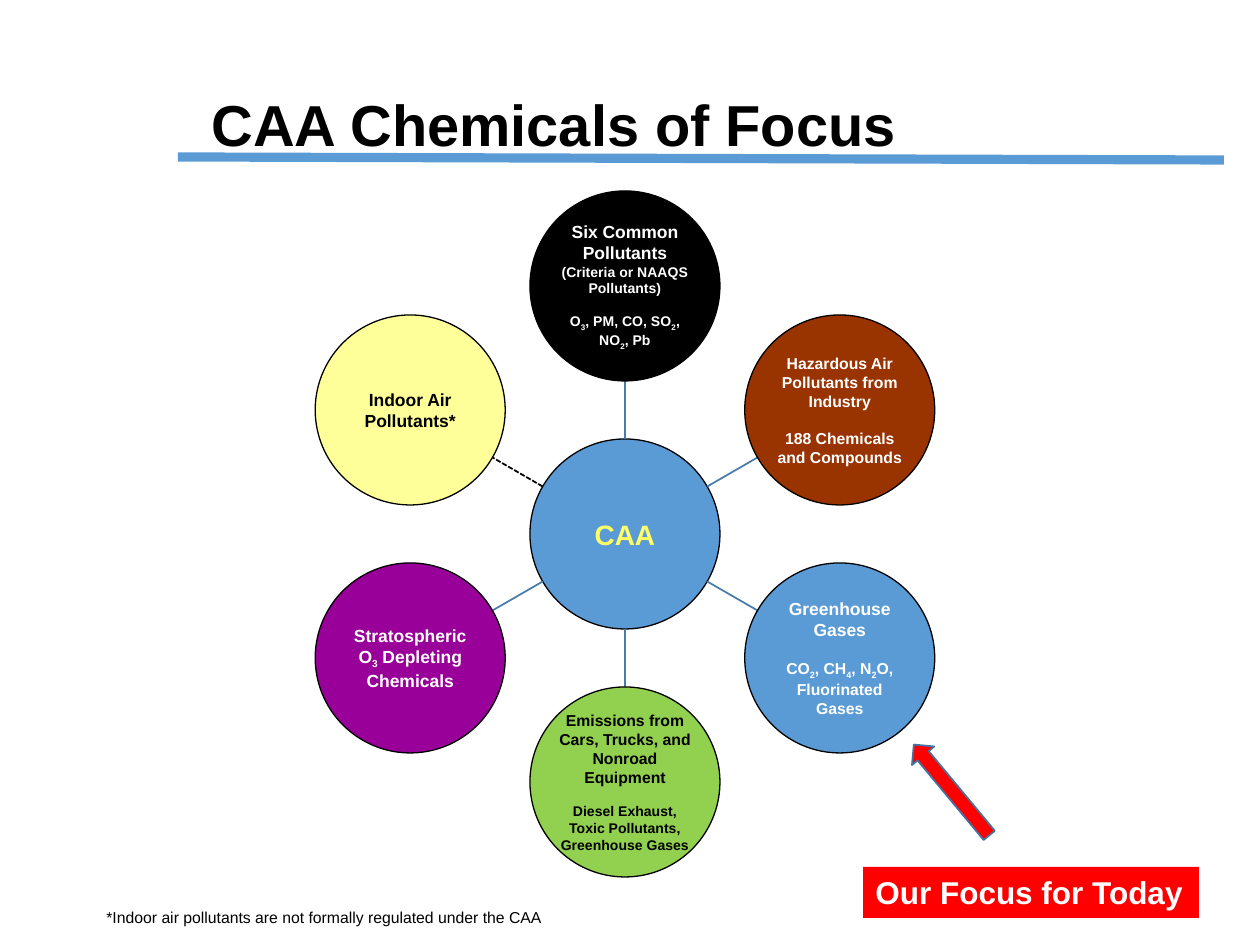
import math

from lxml import etree
from pptx import Presentation
from pptx import util as u
from pptx.dml.color import RGBColor
from pptx.enum import dml, shapes, text
from pptx.oxml import ns

BLACK = RGBColor(0x00, 0x00, 0x00)
WHITE = RGBColor(0xFF, 0xFF, 0xFF)
BLUE = RGBColor(0x5B, 0x9B, 0xD5)
SPOKE_BLUE = RGBColor(0x49, 0x7C, 0xAB)
ARROW_EDGE = RGBColor(0x43, 0x73, 0x9E)
RED = RGBColor(0xFF, 0x00, 0x00)
BROWN = RGBColor(0x99, 0x33, 0x00)
GREEN = RGBColor(0x92, 0xD0, 0x50)
PURPLE = RGBColor(0x99, 0x00, 0x99)
PALE_YELLOW = RGBColor(0xFF, 0xFF, 0x99)
BRIGHT_YELLOW = RGBColor(0xFF, 0xFF, 0x66)

FONT = "Arial"
TITLE = "CAA Chemicals of Focus"
FOOTNOTE = "*Indoor air pollutants are not formally regulated under the CAA"
CALLOUT = "Our Focus for Today"

# Each paragraph is (text, size, space before); underscores enclose subscripts.
HUB = (BLUE, BRIGHT_YELLOW, [("CAA", 16, 0)])
SATELLITES = [
    (BLACK, WHITE, [("Six Common Pollutants", 10, 0),
                    ("(Criteria or NAAQS Pollutants)", 8, 0),
                    ("O_3_, PM, CO, SO_2_, NO_2_, Pb", 8, 9.2)]),
    (BROWN, WHITE, [("Hazardous Air Pollutants from Industry", 9, 0),
                    ("188 Chemicals and Compounds", 9, 10.4)]),
    (BLUE, WHITE, [("Greenhouse Gases", 10, 0),
                   ("CO_2_, CH_4_, N_2_O, Fluorinated Gases", 9, 10.4)]),
    (GREEN, BLACK, [("Emissions from Cars, Trucks, and Nonroad Equipment", 9, 0),
                    ("Diesel Exhaust, Toxic Pollutants, Greenhouse Gases", 8, 9.2)]),
    (PURPLE, WHITE, [("Stratospheric O_3_ Depleting Chemicals", 10, 0)]),
    (PALE_YELLOW, BLACK, [("Indoor Air Pollutants*", 10, 0)]),
]
UNREGULATED = 5

PX = u.Inches(1) / 126
CENTER_X, CENTER_Y = 625, 534
RADIUS, ORBIT = 95, 248


def px(*lengths):
    return [round(length * PX) for length in lengths]


def style(font, size, color, bold=True):
    font.name, font.size, font.bold = FONT, u.Pt(size), bold
    font.color.rgb = color


def add_line(page, start, end, color, width):
    line = page.shapes.add_connector(shapes.MSO_CONNECTOR.STRAIGHT, *px(*start, *end))
    line.line.color.rgb = color
    line.line.width = u.Pt(width)
    etree.SubElement(line._element.spPr, ns.qn("a:effectLst"))
    return line


def add_filled(page, kind, frame, fill, edge=None, width=0.75):
    shape = page.shapes.add_shape(kind, *px(*frame))
    shape.shadow.inherit = False
    shape.fill.solid()
    shape.fill.fore_color.rgb = fill
    if edge is None:
        shape.line.fill.background()
    else:
        shape.line.color.rgb = edge
        shape.line.width = u.Pt(width)
    return shape


def add_circle(page, x, y, fill, color, paragraphs):
    frame = (x - RADIUS, y - RADIUS, 2 * RADIUS, 2 * RADIUS)
    circle = add_filled(page, shapes.MSO_SHAPE.OVAL, frame, fill, BLACK)
    box = circle.text_frame
    box.word_wrap = True
    box.vertical_anchor = text.MSO_ANCHOR.MIDDLE
    box.margin_left = box.margin_right = box.margin_top = box.margin_bottom = u.Inches(0.01)
    for index, (words, size, before) in enumerate(paragraphs):
        para = box.add_paragraph() if index else box.paragraphs[0]
        para.alignment = text.PP_ALIGN.CENTER
        if before:
            para.space_before = u.Pt(before)
        for part, piece in enumerate(words.split("_")):
            span = para.add_run()
            span.text = piece
            style(span.font, size, color)
            if part % 2:
                span._r.get_or_add_rPr().set("baseline", "-25000")


def set_label(shape, words, size, color, bold):
    box = shape.text_frame
    box.text = words
    box.word_wrap = False
    box.auto_size = text.MSO_AUTO_SIZE.SHAPE_TO_FIT_TEXT
    box.vertical_anchor = text.MSO_ANCHOR.TOP
    para = box.paragraphs[0]
    para.alignment = text.PP_ALIGN.LEFT
    style(para.runs[0].font, size, color, bold)


def add_title(page):
    title = page.shapes.title
    title.left, title.top, title.width, title.height = px(199, 24, 1086, 207)
    title.text_frame.text = TITLE
    title.text_frame.vertical_anchor = text.MSO_ANCHOR.MIDDLE
    para = title.text_frame.paragraphs[0]
    para.alignment = text.PP_ALIGN.LEFT
    para.line_spacing = 0.9
    style(para.runs[0].font, 33, BLACK)


def add_wheel(page):
    add_circle(page, CENTER_X, CENTER_Y, *HUB)
    for index, satellite in enumerate(SATELLITES):
        angle = math.tau * index / len(SATELLITES)
        across, down = math.sin(angle), -math.cos(angle)
        inner, outer, middle = [
            (CENTER_X + reach * across, CENTER_Y + reach * down)
            for reach in (RADIUS, ORBIT - RADIUS, ORBIT)
        ]
        spoke = add_line(page, inner, outer, SPOKE_BLUE, 1)
        if index == UNREGULATED:
            spoke.line.color.rgb = BLACK
            spoke.line.dash_style = dml.MSO_LINE.SQUARE_DOT
        add_circle(page, *middle, *satellite)


def main():
    deck = Presentation()
    deck.slide_width, deck.slide_height = px(1260, 945)
    page = deck.slides.add_slide(deck.slide_layouts[5])
    add_title(page)
    add_wheel(page)
    footnote = page.shapes.add_textbox(*px(94, 902, 465, 32))
    set_label(footnote, FOOTNOTE, 9, BLACK, False)
    callout = add_filled(page, shapes.MSO_SHAPE.RECTANGLE, (863, 867, 336, 51), RED)
    set_label(callout, CALLOUT, 18, WHITE, True)
    arrow = add_filled(page, shapes.MSO_SHAPE.DOWN_ARROW, (937, 731, 29, 118),
                       RED, ARROW_EDGE, 1)
    arrow.rotation = 140.3
    add_line(page, (178, 157), (1224, 160), BLUE, 5.25)
    deck.save("out.pptx")


if __name__ == "__main__":
    main()
